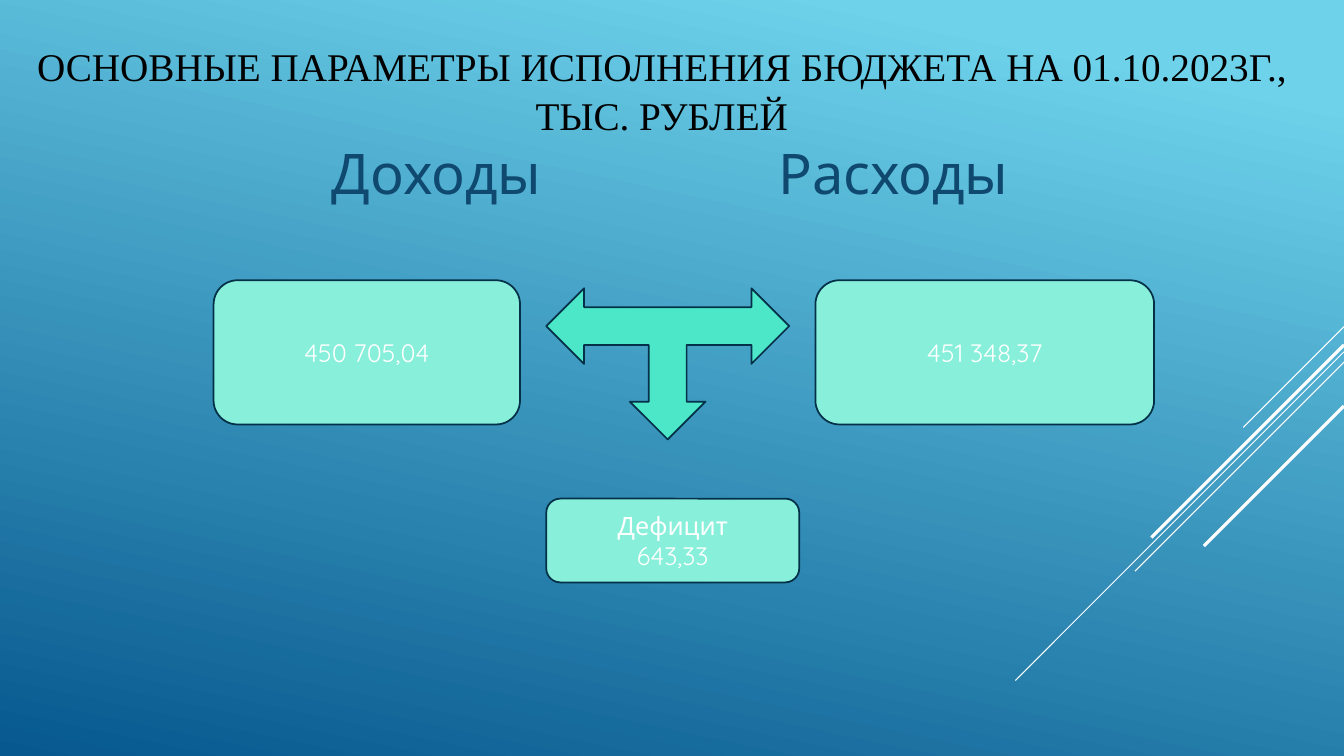
from lxml.etree import SubElement
from pptx import Presentation
from pptx.dml.color import RGBColor
from pptx.enum.shapes import MSO_CONNECTOR, MSO_SHAPE
from pptx.enum.text import MSO_ANCHOR, PP_ALIGN
from pptx.oxml.ns import qn
from pptx.util import Pt

WIDTH, HEIGHT = 960, 540


def rgb(value):
    return RGBColor.from_string(value)


class BudgetSlide:
    box_fill, arrow_fill, outline = "87EFDA", "4BE7C8", "043148"
    number_style = {"name": "Quicksand", "size": Pt(18), "color": "FFFFFF"}
    heading_style = {"name": "Quicksand", "size": Pt(40), "color": "0F496F"}
    title_style = {"name": "Times New Roman", "size": Pt(28), "color": "000000"}

    def __init__(self, prs):
        self.s = prs.slides.add_slide(prs.slide_layouts[6])

    def background(self, stops, angle):
        fill = self.s.background.fill
        fill.gradient()
        fill.gradient_angle = angle
        for stop, (position, color) in zip(fill.gradient_stops, stops):
            stop.position = position
            stop.color.rgb = rgb(color)

    def diagonal(self, top, run, weight):
        """Draw a 45° line falling leftwards from the right slide edge."""
        line = self.s.shapes.add_connector(
            MSO_CONNECTOR.STRAIGHT, Pt(WIDTH), Pt(top), Pt(WIDTH - run), Pt(top + run))
        line.line.color.rgb = rgb("FFFFFF")
        line.line.width = Pt(weight)
        SubElement(line._element.spPr, qn("a:effectLst"))

    def add_text(self, sp, lines, style, align=PP_ALIGN.CENTER, spacing=1.0):
        tf = sp.text_frame
        tf.word_wrap = True
        tf.vertical_anchor = MSO_ANCHOR.MIDDLE
        for i, line in enumerate(lines):
            p = tf.paragraphs[0] if i == 0 else tf.add_paragraph()
            p.alignment = align
            p.line_spacing = spacing
            r = p.add_run()
            r.text = line
            for key, value in style.items():
                if key == "color":
                    r.font.color.rgb = rgb(value)
                else:
                    setattr(r.font, key, value)

    def title(self, text, *box):
        sp = self.s.shapes.add_textbox(*map(Pt, box))
        self.add_text(sp, [text], self.title_style, spacing=1.04)

    def heading(self, text, *box):
        sp = self.s.shapes.add_textbox(*map(Pt, box))
        sp.text_frame.margin_left = sp.text_frame.margin_right = 0
        self.add_text(sp, [text], self.heading_style, PP_ALIGN.LEFT)

    def shape(self, kind, fill, *box):
        sp = self.s.shapes.add_shape(kind, *map(Pt, box))
        sp.shadow.inherit = False
        sp.fill.solid()
        sp.fill.fore_color.rgb = rgb(fill)
        sp.line.color.rgb = rgb(self.outline)
        sp.line.width = Pt(1.25)
        return sp

    def amount_box(self, lines, *box):
        sp = self.shape(MSO_SHAPE.ROUNDED_RECTANGLE, self.box_fill, *box)
        self.add_text(sp, lines, self.number_style)

    def three_way_arrow(self, *box):
        sp = self.shape(MSO_SHAPE.LEFT_RIGHT_UP_ARROW, self.arrow_fill, *box)
        sp.rotation = 180


def main():
    prs = Presentation()
    prs.slide_width, prs.slide_height = Pt(WIDTH), Pt(HEIGHT)
    slide = BudgetSlide(prs)
    slide.background([(0.1, "6ED2EB"), (1, "06588E")], 258)

    for top, run, weight in [(233.3, 72, 0.75), (251.3, 234.7, 0.75), (258.7, 149.3, 0.75),
                             (246.4, 137.5, 2.25), (290, 100, 2.25)]:
        slide.diagonal(top, run, weight)

    slide.title("ОСНОВНЫЕ ПАРАМЕТРЫ ИСПОЛНЕНИЯ БЮДЖЕТА НА 01.10.2023Г., ТЫС. РУБЛЕЙ",
                11.5, 4.3, 922.3, 118.8)
    for text, left in [("Доходы", 237), ("Расходы", 556)]:
        slide.heading(text, left, 93, 190, 60)

    for amount, left, width in [("450 705,04", 152.6, 218.9), ("451 348,37", 582.5, 241.9)]:
        slide.amount_box([amount], left, 200.2, width, 103)
    slide.three_way_arrow(390.2, 205.9, 173.5, 108)
    slide.amount_box(["Дефицит", "643,33"], 390.2, 356.2, 180.7, 59.8)

    prs.save("out.pptx")


if __name__ == "__main__":
    main()
